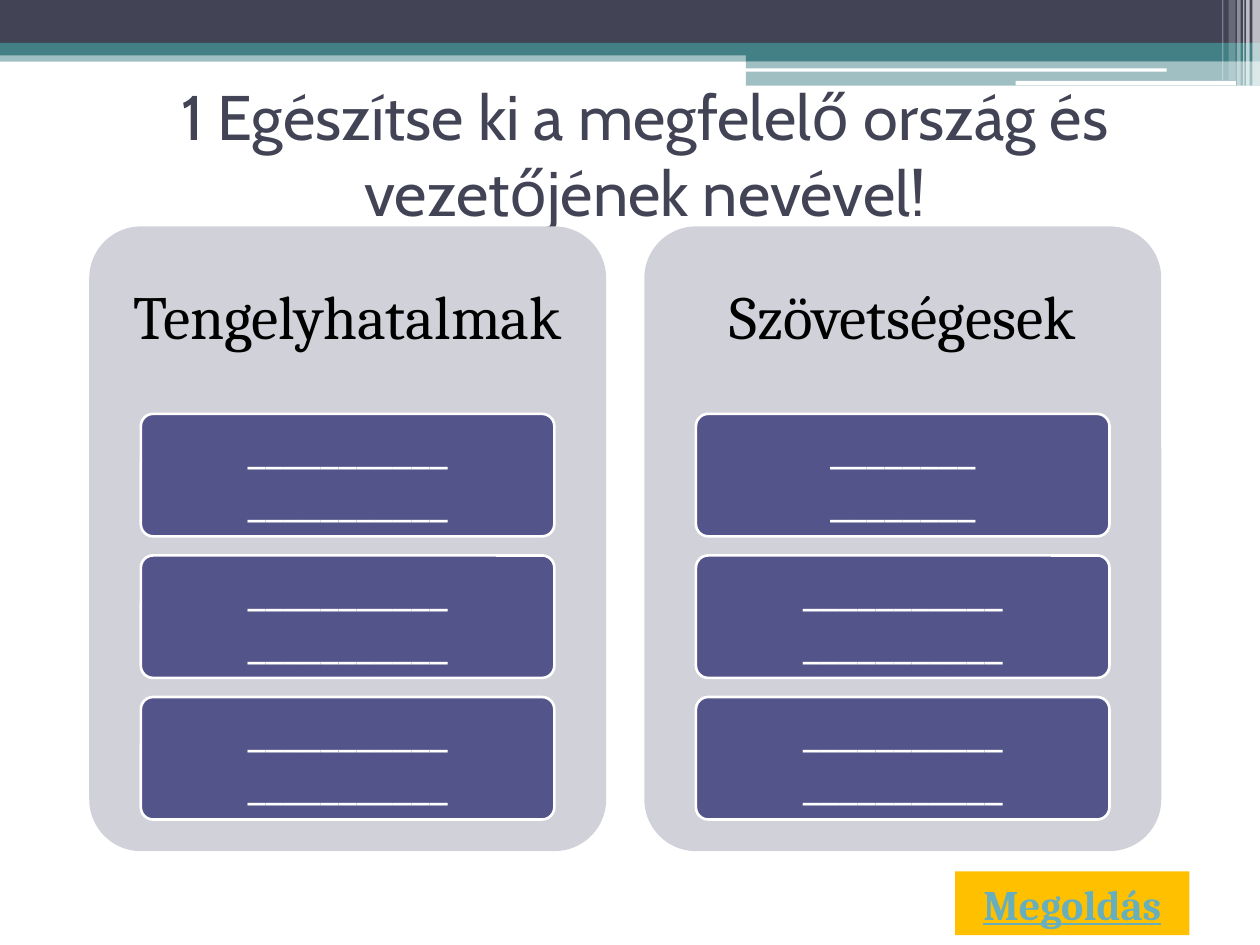
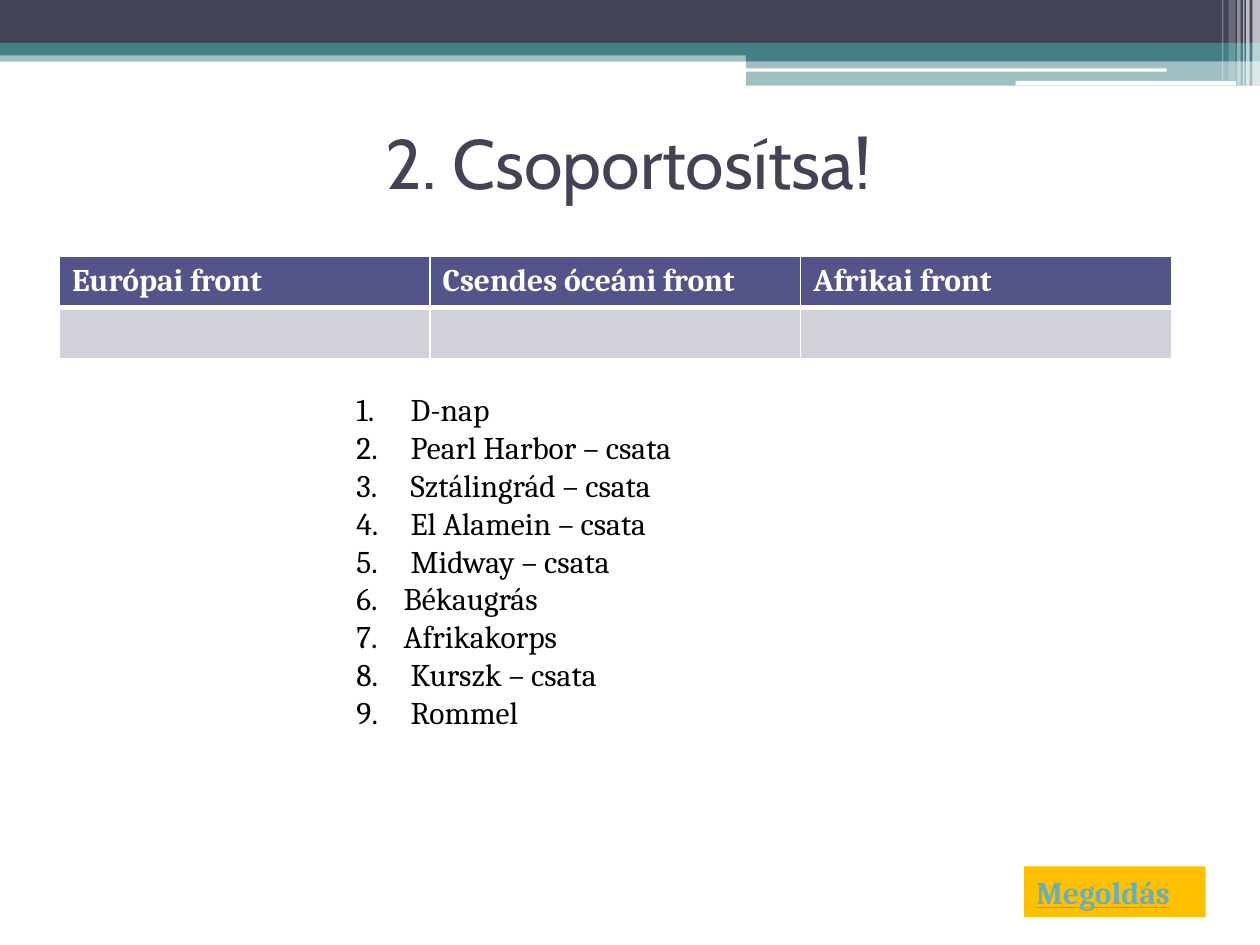
"""Build two history quiz slides with a shared banded header."""
from lxml.etree import SubElement as Sub
from pptx import Presentation
from pptx.dml.color import RGBColor as Rgb
from pptx.enum.shapes import MSO_SHAPE as Kind
from pptx.enum.text import MSO_ANCHOR as Anchor, PP_ALIGN as Align
from pptx.oxml.ns import qn
from pptx.util import Pt

HUE = {
    "dark": "424456", "teal": "438086", "white": "FFFFFF", "black": "000000",
    "pale": "D1D1DA", "plum": "53548A", "gold": "FFC000", "link": "67AFBD",
}
BANDS = [
    (0, 28.8, 720, 6.5, "teal", 50),
    (0, 0, 720, 24.5, "dark", 100),
    (0, 24.5, 720, 7.2, "teal", 100),
    (426.2, 28, 293.8, 7, "teal", 100),
    (426.2, 35, 293.8, 14, "teal", 50),
    (425.5, 39, 241.2, 2, "white", 100),
    (580.3, 46.2, 126, 2.6, "white", 100),
    (715.7, 0, 4.3, 49, "white", 65),
    (712.1, 0, 2, 49, "white", 65),
    (710.4, 0, 0.7, 49, "white", 60),
    (707, 0, 2, 49, "white", 40),
    (702, 0, 4, 46, "white", 20),
    (698.4, 0, 0.7, 46, "white", 30),
]


def block(slide, spot, hue, kind=Kind.RECTANGLE, alpha=100):
    """Add a flat filled shape."""
    shape = slide.shapes.add_shape(kind, *[Pt(n) for n in spot])
    shape.shadow.inherit = False
    shape.fill.solid()
    shape.fill.fore_color.rgb = Rgb.from_string(HUE[hue])
    shape.line.fill.background()
    if kind == Kind.ROUNDED_RECTANGLE:
        shape.adjustments[0] = 0.1
    if alpha < 100:
        tone = shape.fill.fore_color._xFill.find(qn("a:srgbClr"))
        Sub(tone, qn("a:alpha"), val=str(alpha * 1000))
    return shape


def write(frame, lines, size, hue, align=Align.LEFT, face="Cambria",
          bold=False, line=False):
    """Fill the first paragraph with lines and return it."""
    frame.word_wrap = True
    para = frame.paragraphs[0]
    para.alignment = align
    for num, words in enumerate(lines):
        if num:
            para.add_line_break()
        run = para.add_run()
        run.text = words
        font = run.font
        font.size, font.name, font.bold, font.underline = Pt(size), face, bold, line
        font.color.rgb = Rgb.from_string(HUE[hue])
    return para


deck = Presentation()
deck.slide_width, deck.slide_height = Pt(720), Pt(540)

HEADS = [
    ("1 Egészítse ki a megfelelő ország és vezetőjének nevével!",
     36, (44.6, 45.4, 648, 84.2)),
    ("2. Csoportosítsa! ", 40, (39.6, 50.4, 648, 84.2)),
]
KEYS = [
    ((545.8, 498, 133.9, 36.4), 24, Align.CENTER),
    ((585.2, 495, 103.8, 29.1), 18, Align.LEFT),
]
slides = []
for (words, size, spot), (place, small, align) in zip(HEADS, KEYS):
    slide = deck.slides.add_slide(deck.slide_layouts[6])
    slides.append(slide)
    for *edge, hue, alpha in BANDS:
        block(slide, edge, hue, alpha=alpha)
    title = slide.shapes.add_textbox(*[Pt(n) for n in spot]).text_frame
    title.vertical_anchor = Anchor.MIDDLE
    write(title, [words], size, "dark", Align.CENTER, "Cabin")
    key = block(slide, place, "gold")
    write(key.text_frame, ["Megoldás"], small, "link", align, bold=True, line=True)
quiz, sort = slides

SIDES = [("Tengelyhatalmak", [11, 11, 11]), ("Szövetségesek", [8, 11, 11])]
for col, (name, blanks) in enumerate(SIDES):
    left = 51 + col * 317.2
    block(quiz, (left, 129.4, 295.4, 357), "pale", Kind.ROUNDED_RECTANGLE)
    head = quiz.shapes.add_textbox(Pt(left), Pt(129.4), Pt(295.4), Pt(107.1))
    jobs = [(head, [name], 35, "black", 10.8, 10.8)]
    for row, count in enumerate(blanks):
        card = block(quiz, (left + 29.5, 236.5 + row * 80.9, 236.3, 70),
                     "plum", Kind.ROUNDED_RECTANGLE)
        card.line.color.rgb = Rgb.from_string(HUE["white"])
        card.line.width = Pt(1.5)
        jobs.append((card, ["_" * count] * 2, 28, "white", 5.8, 4.3))
    for shape, lines, size, hue, wide, high in jobs:
        frame = shape.text_frame
        frame.margin_left = frame.margin_right = Pt(wide)
        frame.margin_top = frame.margin_bottom = Pt(high)
        frame.vertical_anchor = Anchor.MIDDLE
        para = write(frame, lines, size, hue, Align.CENTER)
        para.line_spacing = 0.9
        para.space_after = Pt(size * 0.35)

FRONTS = ["Európai front", "Csendes óceáni front", "Afrikai front"]
grid = sort.shapes.add_table(2, 3, Pt(34), Pt(146.5), Pt(635.4), Pt(58)).table
grid.horz_banding = False
for row in grid.rows:
    row.height = Pt(29.2)
for col, name in enumerate(FRONTS):
    grid.columns[col].width = Pt(211.8)
    for row, hue in enumerate(["plum", "pale"]):
        cell = grid.cell(row, col)
        props = cell._tc.get_or_add_tcPr()
        for side in "LRTB":
            thick = 3 if (row, side) in [(0, "B"), (1, "T")] else 1
            edge = Sub(props, qn(f"a:ln{side}"), w=str(Pt(thick)))
            Sub(Sub(edge, qn("a:solidFill")), qn("a:srgbClr"), val=HUE["white"])
        cell.fill.solid()
        cell.fill.fore_color.rgb = Rgb.from_string(HUE[hue])
    write(grid.cell(0, col).text_frame, [name], 18, "white", bold=True)
    grid.cell(1, col).text_frame.paragraphs[0].font.size = Pt(18)

EVENTS = [
    " D-nap", " Pearl Harbor – csata", " Sztálingrád – csata",
    " El Alamein – csata", " Midway – csata", "Békaugrás", "Afrikakorps",
    " Kurszk – csata", " Rommel",
]
frame = sort.shapes.add_textbox(Pt(196.6), Pt(219.6), Pt(286.6), Pt(203.8)).text_frame
frame.word_wrap = True
for num, event in enumerate(EVENTS):
    para = frame.add_paragraph() if num else frame.paragraphs[0]
    props = para._p.get_or_add_pPr()
    props.set("marL", str(Pt(27)))
    props.set("indent", str(Pt(-27)))
    Sub(props, qn("a:buFont"), typeface="+mj-lt")
    Sub(props, qn("a:buAutoNum"), type="arabicPeriod")
    run = para.add_run()
    run.text = event
    run.font.size, run.font.name = Pt(18), "Cambria"
    run.font.color.rgb = Rgb.from_string(HUE["black"])

deck.save("out.pptx")
